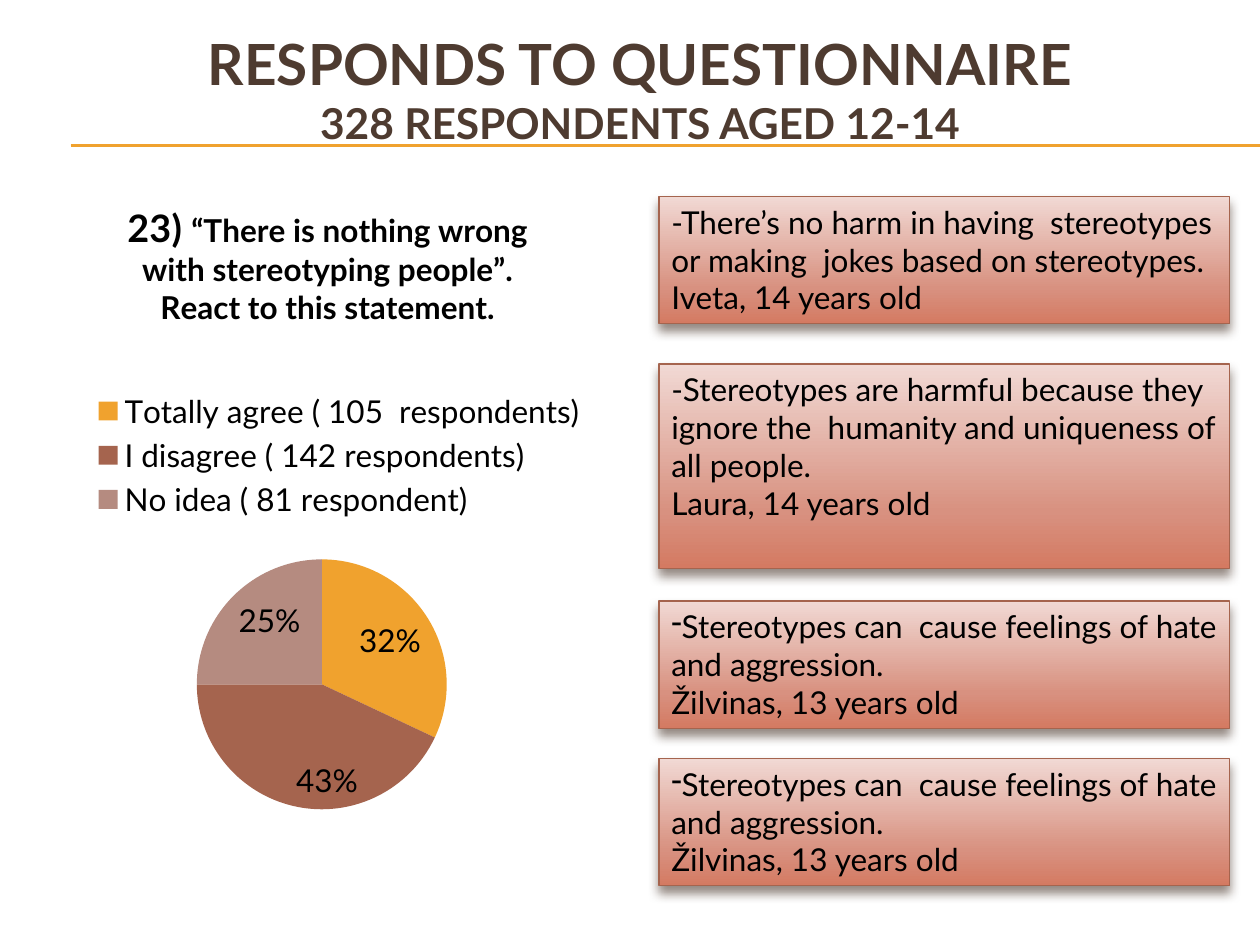
from dataclasses import dataclass

from lxml.etree import SubElement
from pptx import Presentation
from pptx.chart.data import CategoryChartData
from pptx.dml.color import RGBColor
from pptx.enum.chart import XL_CHART_TYPE as ChartType
from pptx.enum.chart import XL_LABEL_POSITION as LabelPosition
from pptx.enum.chart import XL_LEGEND_POSITION as LegendPosition
from pptx.enum.shapes import MSO_CONNECTOR as Connector
from pptx.enum.shapes import MSO_SHAPE as Shape
from pptx.enum.text import MSO_ANCHOR as Anchor
from pptx.enum.text import PP_ALIGN as Align
from pptx.oxml.ns import qn
from pptx.util import Inches, Pt

COLUMNS, ROWS = 100, 75
FONT = "Lato"
BODY_SIZE = 18
COLORS = {
    "heading": "4E3B30",
    "text": "000000",
    "rule": "F0A22E",
    "border": "A5644E",
    "agree": "F0A22E",
    "disagree": "A5644E",
    "no_idea": "B58B80",
    "light": "F1D9D4",
    "middle": "D89180",
    "deep": "D47A62",
}
GRADIENT = [(0, "light"), (72, "middle"), (100, "deep")]


@dataclass
class Quote:
    row: float
    height: float
    lines: list[str]
    dashed: bool = False


@dataclass
class Answer:
    label: str
    percent: int
    color: str


HATE = ["Stereotypes can  cause feelings of hate and aggression.", "Žilvinas, 13 years old"]
QUOTES = [
    Quote(15.6, 10.1, ["-There’s no harm in having  stereotypes or making  jokes "
                       "based on stereotypes. Iveta, 14 years old"]),
    Quote(28.9, 16.2, ["-Stereotypes are harmful because they ignore the  humanity "
                       "and uniqueness of all people.", "Laura, 14 years old"]),
    Quote(47.7, 10.1, HATE, dashed=True),
    Quote(60.2, 10.1, HATE, dashed=True),
]
ANSWERS = [
    Answer("Totally agree ( 105  respondents)", 32, "agree"),
    Answer("I disagree ( 142 respondents) ", 43, "disagree"),
    Answer("No idea ( 81 respondent)", 25, "no_idea"),
]

deck = Presentation()
deck.slide_width, deck.slide_height = Inches(10), Inches(7.5)
slide = deck.slides.add_slide(deck.slide_layouts[6])


def col(count: float) -> int:
    return round(deck.slide_width * count / COLUMNS)


def row(count: float) -> int:
    return round(deck.slide_height * count / ROWS)


def rgb(name: str) -> RGBColor:
    return RGBColor.from_string(COLORS[name])


def style(font, size: float, color: str = "text", bold: bool = False) -> None:
    font.name, font.size, font.bold = FONT, Pt(size), bold
    font.color.rgb = rgb(color)


def add_run(paragraph, text: str, size: float, color: str = "text", bold: bool = False) -> None:
    run = paragraph.add_run()
    run.text = text
    style(run.font, size, color, bold)


def add_color(parent, name: str):
    return SubElement(parent, qn("a:srgbClr"), val=COLORS[name])


def add_rule(at_row: float) -> None:
    rule = slide.shapes.add_connector(Connector.STRAIGHT, col(5.6), row(at_row), col(COLUMNS), row(at_row))
    rule.line.color.rgb = rgb("rule")
    rule.line.width = Pt(0.75)
    SubElement(rule._element.spPr, qn("a:effectLst"))


def add_heading() -> None:
    heading = slide.shapes.add_textbox(col(3.3), row(5), col(95), row(9.2))
    frame = heading.text_frame
    frame.word_wrap = True
    frame.vertical_anchor = Anchor.MIDDLE
    frame.margin_bottom = row(5.7)
    paragraph = frame.paragraphs[0]
    paragraph.alignment = Align.CENTER
    add_run(paragraph, "RESPONDS TO QUESTIONNAIRE", 32.4, "heading", True)
    paragraph.add_line_break()
    add_run(paragraph, "328 RESPONDENTS AGED 12-14", 24.3, "heading", True)


def add_gradient(box) -> None:
    box.fill.gradient()
    box.fill.gradient_angle = 270
    stops = box._element.spPr.find(qn("a:gradFill")).find(qn("a:gsLst"))
    for stop in list(stops):
        stops.remove(stop)
    for percent, name in GRADIENT:
        add_color(SubElement(stops, qn("a:gs"), pos=str(percent * 1000)), name)


def add_shadow(box) -> None:
    box.shadow.inherit = False
    effects = box._element.spPr.find(qn("a:effectLst"))
    shadow = SubElement(effects, qn("a:outerShdw"), blurRad=str(Pt(6)), dist=str(Pt(4)),
                        dir="5400000", rotWithShape="0")
    SubElement(add_color(shadow, "heading"), qn("a:alpha"), val="60000")


def add_quote(quote: Quote) -> None:
    box = slide.shapes.add_shape(Shape.RECTANGLE, col(52.3), row(quote.row), col(45.3), row(quote.height))
    add_gradient(box)
    box.line.color.rgb = rgb("border")
    box.line.width = Pt(0.79)
    add_shadow(box)
    frame = box.text_frame
    frame.word_wrap = True
    frame.vertical_anchor = Anchor.TOP
    for index, line in enumerate(quote.lines):
        paragraph = frame.add_paragraph() if index else frame.paragraphs[0]
        paragraph.alignment = Align.LEFT
        if quote.dashed and index == 0:
            SubElement(paragraph._p.get_or_add_pPr(), qn("a:buChar"), char="-")
        add_run(paragraph, line, BODY_SIZE)


def place(part, x: float, y: float, width: float, height: float, inner: bool = False) -> None:
    layout = part.find(qn("c:layout"))
    if layout is None:
        layout = part.makeelement(qn("c:layout"))
        before = part.find(qn("c:legendPos"))
        if before is None:
            part.insert(0, layout)
        else:
            before.addnext(layout)
    manual = SubElement(layout, qn("c:manualLayout"))
    if inner:
        SubElement(manual, qn("c:layoutTarget"), val="inner")
    for tag in ("xMode", "yMode"):
        SubElement(manual, qn(f"c:{tag}"), val="edge")
    for tag, share in zip("xywh", (x, y, width, height)):
        SubElement(manual, qn(f"c:{tag}"), val=str(share))


def add_answers_chart() -> None:
    data = CategoryChartData()
    data.categories = [answer.label for answer in ANSWERS]
    data.add_series("Series 1", [answer.percent for answer in ANSWERS])
    chart = slide.shapes.add_chart(ChartType.PIE, col(3.1), row(14.1), col(45.8), row(55.1), data).chart
    style(chart.font, BODY_SIZE)

    question = chart.chart_title.text_frame.paragraphs[0]
    add_run(question, "23) ", 21.6, bold=True)
    add_run(question, "“There is nothing wrong with stereotyping people”. React to this statement.",
            BODY_SIZE, bold=True)

    chart.has_legend = True
    chart.legend.position = LegendPosition.TOP
    chart.legend.include_in_layout = False
    style(chart.legend.font, BODY_SIZE)
    place(chart.legend._element, 0.07, 0.3, 0.9, 0.2)

    pie = chart.plots[0]
    pie.vary_by_categories = True
    for index, answer in enumerate(ANSWERS):
        fill = pie.series[0].points[index].format.fill
        fill.solid()
        fill.fore_color.rgb = rgb(answer.color)
    pie.has_data_labels = True
    labels = pie.data_labels
    labels.show_percentage, labels.show_value = True, False
    labels.number_format, labels.number_format_is_linked = "0%", False
    labels.position = LabelPosition.INSIDE_END
    style(labels.font, BODY_SIZE)
    place(pie._element.getparent(), 0.27, 0.55, 0.44, 0.36, inner=True)


for rule_row in (11.5, 11.6):
    add_rule(rule_row)
add_heading()
add_answers_chart()
for quote in QUOTES:
    add_quote(quote)
deck.save("out.pptx")
